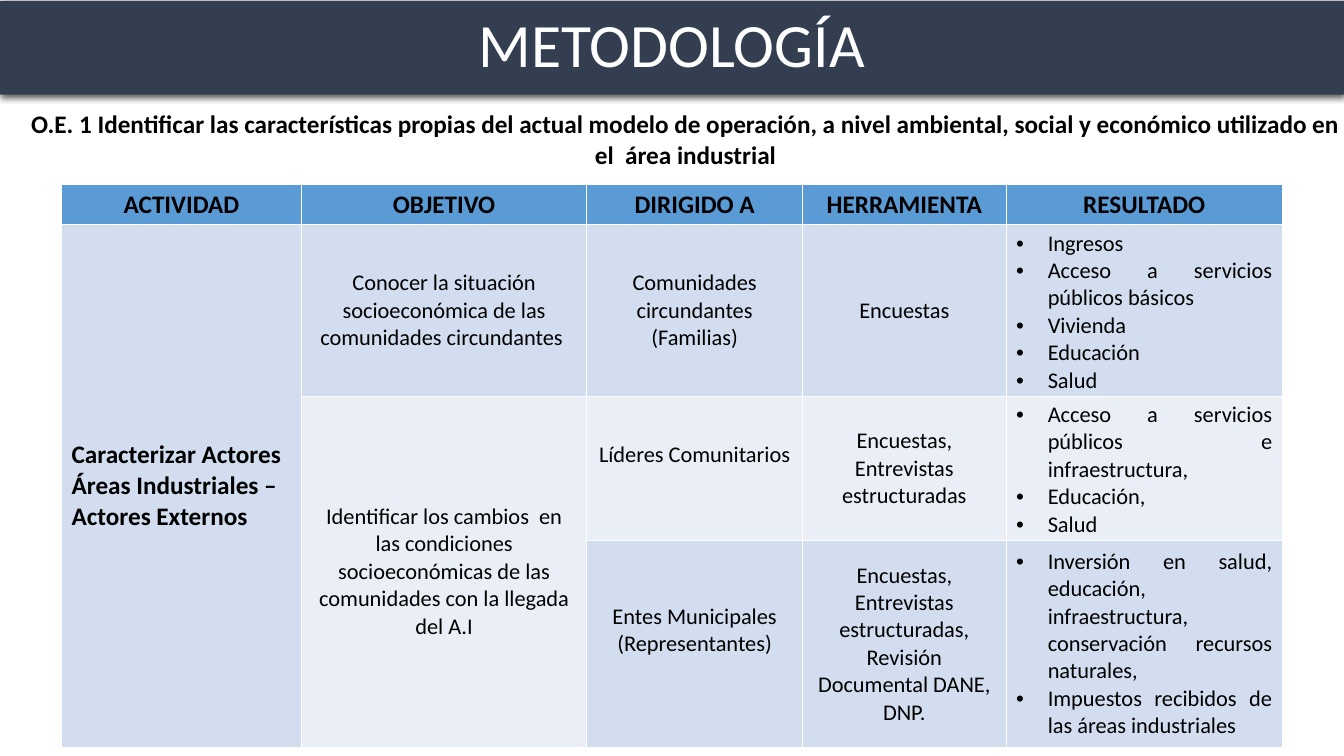
from lxml.etree import SubElement
from pptx import Presentation
from pptx.dml.color import RGBColor as RGB
from pptx.enum.shapes import MSO_SHAPE as Shape
from pptx.enum.text import MSO_ANCHOR as Anchor, PP_ALIGN as Align
from pptx.oxml.ns import qn
from pptx.util import Inches, Pt

WIDE, HIGH = 13.33, 7.5
FONT = "Calibri"
NAVY = RGB(0x33, 0x3F, 0x50)
BLUE = RGB(0x5B, 0x9B, 0xD5)
PALE = RGB(0xD2, 0xDE, 0xEF)
LIGHT = RGB(0xEA, 0xEF, 0xF7)
WHITE = RGB(0xFF, 0xFF, 0xFF)
BLACK = RGB(0, 0, 0)

TITLE = "METODOLOGÍA"
GOAL = ("O.E. 1 Identificar las características propias del actual modelo de operación, "
        "a nivel ambiental, social y económico utilizado en el  área industrial")
COLS = [2.38, 2.83, 2.14, 2.02, 2.74]
ROWS = [0.37, 1.56, 1.31, 2.05]
FILLS = [BLUE, PALE, LIGHT, PALE]
MERGES = [((1, 0), (3, 0)), ((2, 1), (3, 1))]
RAISED = [(2, 2), (3, 2)]
CELLS = [
    ["ACTIVIDAD", "OBJETIVO", "DIRIGIDO A", "HERRAMIENTA", "RESULTADO"],
    ["Caracterizar Actores Áreas Industriales – Actores Externos",
     "Conocer la situación socioeconómica de las comunidades circundantes ",
     "Comunidades circundantes (Familias)",
     "Encuestas",
     "Ingresos\nAcceso a servicios públicos básicos\nVivienda\nEducación\nSalud"],
    [None,
     "Identificar los cambios  en las condiciones socioeconómicas de las "
     "comunidades con la llegada del A.I",
     "Líderes Comunitarios",
     "Encuestas, Entrevistas estructuradas",
     "Acceso a servicios públicos e infraestructura,\nEducación,\nSalud"],
    [None, None,
     "Entes Municipales (Representantes)",
     "Encuestas,\nEntrevistas estructuradas, Revisión Documental DANE, DNP.",
     "Inversión en salud, educación, infraestructura, conservación recursos naturales,\n"
     "Impuestos recibidos de las áreas industriales"],
]


def write(frame, text, size, color=BLACK, bold=False, align=Align.CENTER):
    frame.text = text
    frame.word_wrap = True
    for para in frame.paragraphs:
        para.alignment = align
        for run in para.runs:
            font = run.font
            font.name, font.size, font.bold = FONT, Pt(size), bold
            font.color.rgb = color


def shade(shape):
    shape.shadow.inherit = False
    effects = shape._element.spPr.find(qn("a:effectLst"))
    glow = SubElement(effects, qn("a:outerShdw"), blurRad=str(Pt(4.5)),
                      dist=str(Pt(1.5)), dir="5400000", algn="t", rotWithShape="0")
    tint = SubElement(glow, qn("a:srgbClr"), val=str(BLACK))
    SubElement(tint, qn("a:alpha"), val="63000")


def bullet(para):
    props = para._p.get_or_add_pPr()
    props.set("marL", str(Pt(22.5)))
    props.set("indent", str(-Pt(22.5)))
    SubElement(props, qn("a:buFont"), typeface="Arial")
    SubElement(props, qn("a:buChar"), char="•")


def paint(shape, color):
    shape.fill.solid()
    shape.fill.fore_color.rgb = color


def banner(slide, box):
    bar = slide.shapes.add_shape(Shape.RECTANGLE, *map(Inches, box))
    paint(bar, NAVY)
    bar.line.fill.background()
    shade(bar)
    frame = bar.text_frame
    write(frame, TITLE, 44, WHITE)
    frame.vertical_anchor = Anchor.MIDDLE
    frame.paragraphs[0].line_spacing = 0.9


def goal(slide, box):
    frame = slide.shapes.add_textbox(*map(Inches, box)).text_frame
    frame.margin_left = frame.margin_right = 0
    write(frame, GOAL, 18, bold=True)


def header(cell, text):
    write(cell.text_frame, text, 18, bold=True)
    cell.vertical_anchor = Anchor.TOP


def body(cell, text, col):
    first, last = col == 0, col == len(COLS) - 1
    align = Align.LEFT if first else Align.JUSTIFY if last else Align.CENTER
    write(cell.text_frame, text, 18 if first else 16, bold=first, align=align)
    cell.vertical_anchor = Anchor.MIDDLE
    if last:
        for para in cell.text_frame.paragraphs:
            bullet(para)


def matrix(slide, box):
    frame = slide.shapes.add_table(len(ROWS), len(COLS), *map(Inches, box))
    table = frame.table
    for col, width in zip(table.columns, COLS):
        col.width = Inches(width)
    for row, height in zip(table.rows, ROWS):
        row.height = Inches(height)
    frame.height = Inches(box[3])
    for start, end in MERGES:
        table.cell(*start).merge(table.cell(*end))
    for r, texts in enumerate(CELLS):
        for c, text in enumerate(texts):
            cell = table.cell(r, c)
            paint(cell, FILLS[r])
            if r == 0:
                header(cell, text)
            elif text:
                body(cell, text, c)
    for spot in RAISED:
        table.cell(*spot).margin_bottom = Inches(0.32)


def main():
    deck = Presentation()
    deck.slide_width, deck.slide_height = Inches(WIDE), Inches(HIGH)
    slide = deck.slides.add_slide(deck.slide_layouts[6])
    banner(slide, (0, 0.01, WIDE, 0.93))
    goal(slide, (0.27, 1.03, WIDE - 0.27, 0.71))
    matrix(slide, (0.61, 1.83, sum(COLS), 5.58))
    deck.save("out.pptx")


if __name__ == "__main__":
    main()
